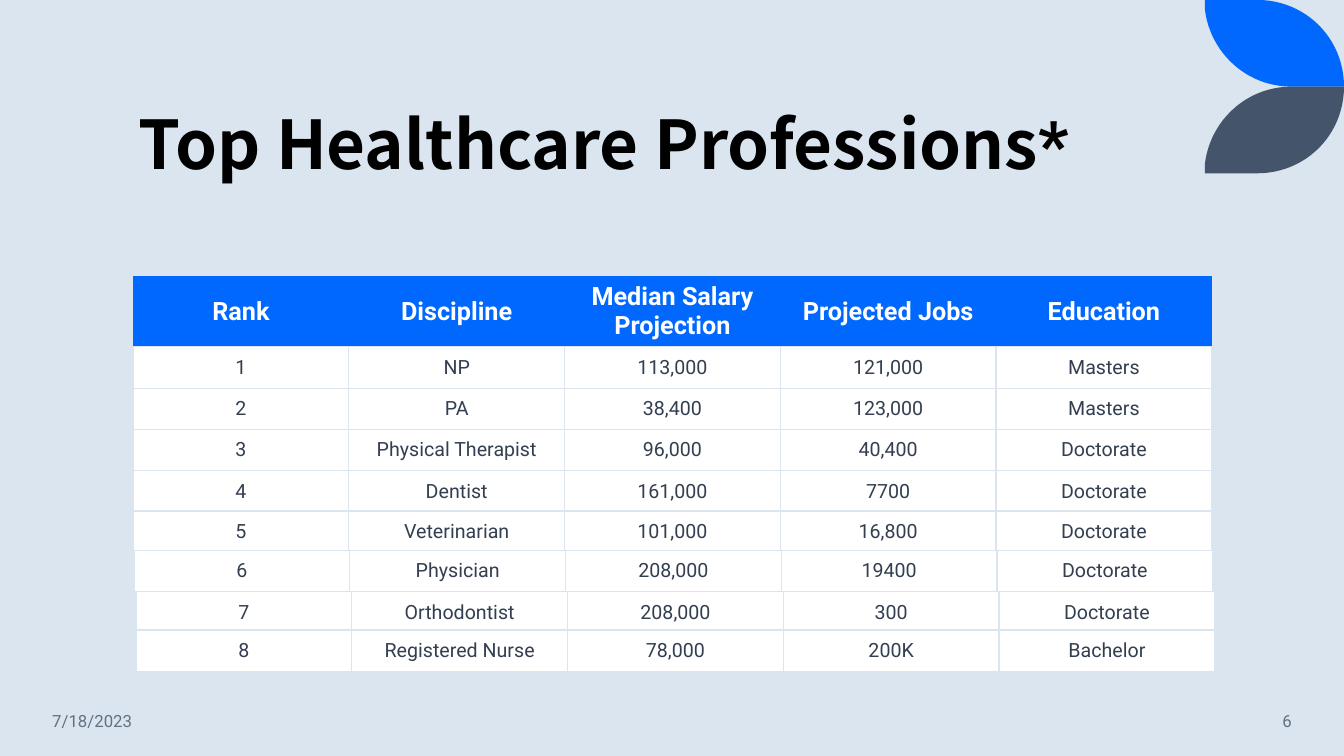
from lxml import etree
from pptx import Presentation
from pptx import util as u
from pptx.dml.color import RGBColor
from pptx.enum import text
from pptx.oxml.ns import qn

COLORS = {"bg": "DAE5EF", "blue": "0068FF", "slate": "44546A", "white": "FFFFFF",
          "black": "000000", "body": "333F50", "footer": "637183"}
BODY_FONT, TITLE_FONT = "Roboto", "Noto Sans CJK KR"
LEFT, CENTER, RIGHT = text.PP_ALIGN.LEFT, text.PP_ALIGN.CENTER, text.PP_ALIGN.RIGHT
MIDDLE, BOTTOM = text.MSO_ANCHOR.MIDDLE, text.MSO_ANCHOR.BOTTOM

TITLE = [("Top Healthcare Professions", TITLE_FONT), ("*", BODY_FONT)]
HEADER = ("Rank", "Discipline", "Median Salary Projection", "Projected Jobs", "Education")
PROFESSIONS = [
    ("1", "NP", "113,000", "121,000", "Masters"),
    ("2", "PA", "38,400", "123,000", "Masters"),
    ("3", "Physical Therapist", "96,000", "40,400", "Doctorate"),
    ("4", "Dentist", "161,000", "7700", "Doctorate"),
    ("5", "Veterinarian", "101,000", "16,800", "Doctorate"),
    ("6", "Physician", "208,000", "19400", "Doctorate"),
    ("7", "Orthodontist", "208,000", "300", "Doctorate"),
    ("8", "Registered Nurse", "78,000", "200K", "Bachelor"),
]
# left, top, rows
TABLES = [
    (1.32, 2.74, [HEADER] + PROFESSIONS[:4]),
    (1.32, 5.07, PROFESSIONS[4:5]),
    (1.33, 5.46, PROFESSIONS[5:6]),
    (1.35, 5.87, PROFESSIONS[6:7]),
    (1.35, 6.25, PROFESSIONS[7:]),
]
COL_W, ROW_H, HEADER_H = 2.14, 0.41, 0.6
FOOTERS = [("7/18/2023", 0.42, 1.86, LEFT), ("6", 11.1, 1.81, RIGHT)]

PETAL_H = 0.86
PETAL_START = (11.95, 0)
# each curve: start, two control points, end
PETAL_CURVES = [
    [(12.47, 0), (12.95, 0), (13.33, 0.38), (13.33, 0.86)],
    [(12.81, 0.86), (12.36, 0.86), (12, 0.52), (11.95, 0.09)],
]


def rgb(name):
    return RGBColor.from_string(COLORS[name])


def add_run(p, words, size, color, font=BODY_FONT, bold=False):
    r = p.add_run()
    r.text = words
    for key, value in {"name": font, "size": u.Pt(size), "bold": bold}.items():
        setattr(r.font, key, value)
    r.font.color.rgb = rgb(color)


def add_text(s, box, runs, size, color, bold=False, align=LEFT, anchor=MIDDLE, spacing=1.0):
    tf = s.shapes.add_textbox(*map(u.Inches, box)).text_frame
    tf.word_wrap, tf.vertical_anchor = True, anchor
    p = tf.paragraphs[0]
    p.alignment, p.line_spacing = align, spacing
    for words, font in runs:
        add_run(p, words, size, color, font, bold)


def set_borders(cell, sides):
    """Rule the named sides in the background colour and clear the others."""
    tc_pr = cell._tc.get_or_add_tcPr()
    for i, side in enumerate("LRTB"):
        ln = etree.Element(qn(f"a:ln{side}"), w=str(u.Pt(1)))
        if side in sides:
            fill = etree.SubElement(ln, qn("a:solidFill"))
            etree.SubElement(fill, qn("a:srgbClr"), val=COLORS["bg"])
        else:
            etree.SubElement(ln, qn("a:noFill"))
        tc_pr.insert(i, ln)


def add_ranking(s, left, top, rows):
    heights = [HEADER_H if row is HEADER else ROW_H for row in rows]
    frame = s.shapes.add_table(len(rows), len(HEADER), u.Inches(left), u.Inches(top),
                               u.Inches(COL_W * len(HEADER)), u.Inches(sum(heights)))
    table = frame.table
    table.first_row, table.horz_banding = rows[0] is HEADER, False
    for col in table.columns:
        col.width = u.Inches(COL_W)
    for i, row in enumerate(rows):
        table.rows[i].height = u.Inches(heights[i])
        head = row is HEADER
        for j, words in enumerate(row):
            cell = table.cell(i, j)
            cell.vertical_anchor = MIDDLE
            cell.fill.solid()
            cell.fill.fore_color.rgb = rgb("blue" if head else "white")
            set_borders(cell, "B" if head else "LRTB")
            p = cell.text_frame.paragraphs[0]
            p.alignment = CENTER
            add_run(p, words, 18 if head else 14, "white" if head else "body", bold=head)


def curve_points(curve, steps=24):
    """Points along a cubic Bezier curve."""
    for i in range(steps + 1):
        t = i / steps
        weights = ((1 - t) ** 3, 3 * t * (1 - t) ** 2, 3 * t * t * (1 - t), t ** 3)
        yield tuple(sum(w * pt[axis] for w, pt in zip(weights, curve)) for axis in (0, 1))


def add_petal(s, color, mirrored):
    outline = [PETAL_START] + [pt for c in PETAL_CURVES for pt in curve_points(c)]
    if mirrored:
        outline = [(x, 2 * PETAL_H - y) for x, y in outline]
    points = [(u.Inches(x), u.Inches(y)) for x, y in outline]
    builder = s.shapes.build_freeform(*points[0])
    builder.add_line_segments(points[1:], close=True)
    sp = builder.convert_to_shape()
    sp.shadow.inherit = False
    sp.fill.solid()
    sp.fill.fore_color.rgb = rgb(color)
    sp.line.fill.background()


def main():
    prs = Presentation()
    prs.slide_width, prs.slide_height = u.Inches(13.33), u.Inches(7.5)
    s = prs.slides.add_slide(prs.slide_layouts[6])
    s.background.fill.solid()
    s.background.fill.fore_color.rgb = rgb("bg")
    add_petal(s, "blue", False)
    add_petal(s, "slate", True)
    add_text(s, (1.28, 0.42, 10.69, 1.45), TITLE, 48, "black", bold=True,
             anchor=BOTTOM, spacing=0.9)
    for words, left, width, align in FOOTERS:
        add_text(s, (left, 6.95, width, 0.4), [(words, BODY_FONT)], 12, "footer", align=align)
    for left, top, rows in TABLES:
        add_ranking(s, left, top, rows)
    prs.save("out.pptx")


if __name__ == "__main__":
    main()
